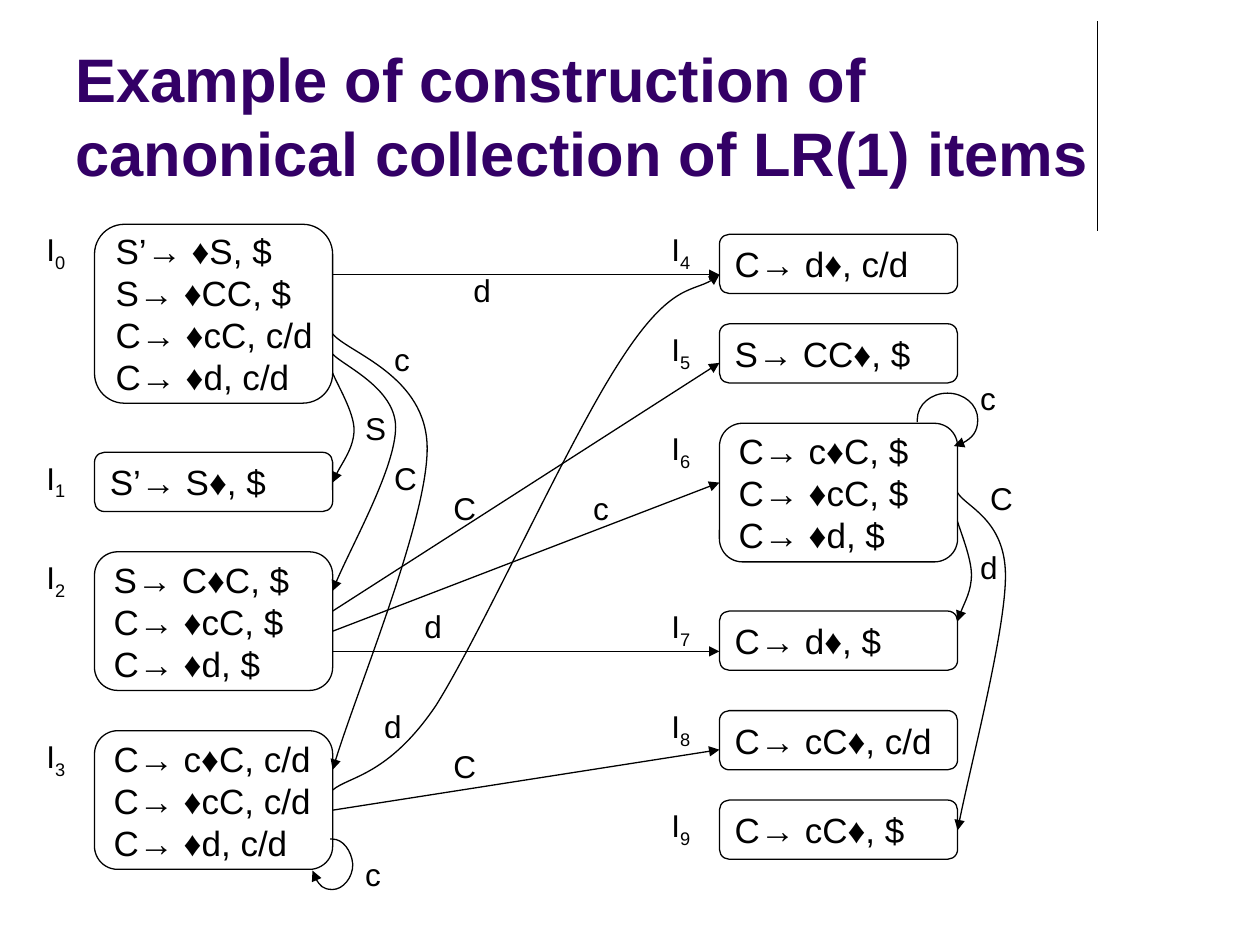
from lxml import etree
from pptx import Presentation
from pptx.dml.color import RGBColor
from pptx.enum import shapes, text
from pptx.oxml.ns import qn
from pptx.util import Inches, Pt

TITLE = "Example of construction of canonical collection of LR(1) items"
INK, PURPLE = "000000", "330066"
LEFT, RIGHT, BOX_WIDTH = 0.75, 5.71, 1.89
LEFT_EDGE = LEFT + BOX_WIDTH
RIGHT_EDGE = RIGHT + BOX_WIDTH

# Item sets: left, top, height, label top, items
STATES = [
    (LEFT, 1.78, 1.42, 1.78, ["S’→ ♦S, $", "S→ ♦CC, $", "C→ ♦cC, c/d", "C→ ♦d, c/d"]),
    (LEFT, 3.59, 0.47, 3.59, ["S’→ S♦, $"]),
    (LEFT, 4.38, 1.1, 4.38, ["S→ C♦C, $", "C→ ♦cC, $", "C→ ♦d, $"]),
    (LEFT, 5.8, 1.1, 5.8, ["C→ c♦C, c/d", "C→ ♦cC, c/d", "C→ ♦d, c/d"]),
    (RIGHT, 1.86, 0.47, 1.78, ["C→ d♦, c/d"]),
    (RIGHT, 2.57, 0.47, 2.57, ["S→ CC♦, $"]),
    (RIGHT, 3.36, 1.1, 3.36, ["C→ c♦C, $", "C→ ♦cC, $", "C→ ♦d, $"]),
    (RIGHT, 4.85, 0.47, 4.77, ["C→ d♦, $"]),
    (RIGHT, 5.64, 0.47, 5.56, ["C→ cC♦, c/d"]),
    (RIGHT, 6.35, 0.47, 6.35, ["C→ cC♦, $"]),
]

# Straight transitions between the columns: start y, end y
STRAIGHT = [(2.18, 2.18), (4.85, 2.88), (5.01, 3.83), (5.17, 5.17), (6.43, 5.95)]

# Curved transitions: a start point, then three Bezier points per segment
CURVES = [
    [(LEFT_EDGE, 2.96), (2.67, 3.04), (2.81, 3.27), (2.81, 3.41),
     (2.81, 3.55), (2.67, 3.74), (LEFT_EDGE, 3.83)],
    [(LEFT_EDGE, 2.81), (2.72, 2.9), (3.14, 3.08), (3.14, 3.39),
     (3.14, 3.71), (2.74, 4.42), (LEFT_EDGE, 4.69)],
    [(LEFT_EDGE, 2.65), (2.76, 2.8), (3.39, 2.98), (3.39, 3.56),
     (3.39, 4.14), (2.79, 5.58), (LEFT_EDGE, 6.11)],
    [(LEFT_EDGE, 6.27), (2.77, 6.16), (3.08, 6.16), (3.46, 5.6),
     (3.83, 5.01), (4.49, 3.54), (4.9, 2.9),
     (5.31, 2.25), (5.54, 2.33), (RIGHT, 2.18)],
    [(RIGHT_EDGE, 4.14), (7.62, 4.21), (7.71, 4.43), (7.71, 4.56),
     (7.71, 4.69), (7.62, 4.85), (RIGHT_EDGE, 4.93)],
    [(RIGHT_EDGE, 3.91), (7.66, 4.02), (7.98, 4.12), (7.98, 4.57),
     (7.98, 5.01), (7.68, 6.16), (RIGHT_EDGE, 6.59)],
    # Self loops
    [(7.28, 3.35), (7.28, 3.34), (7.28, 3.34), (7.28, 3.33),
     (7.28, 3.21), (7.39, 3.12), (7.52, 3.12),
     (7.65, 3.12), (7.76, 3.21), (7.76, 3.33),
     (7.76, 3.43), (7.68, 3.52), (7.57, 3.54)],
    [(2.62, 6.66), (2.63, 6.66), (2.63, 6.66), (2.64, 6.66),
     (2.72, 6.66), (2.79, 6.75), (2.8, 6.86),
     (2.8, 6.97), (2.72, 7.06), (2.64, 7.06),
     (2.56, 7.06), (2.5, 6.99), (2.48, 6.91)],
]

# Transition symbols: symbol, left, top
SYMBOLS = [
    ("S", 2.8, 3.2), ("C", 3.03, 3.59), ("c", 3.03, 2.65), ("d", 3.66, 2.1),
    ("C", 3.5, 3.83), ("c", 4.61, 3.83), ("d", 3.27, 4.77), ("d", 2.95, 5.56),
    ("C", 3.5, 5.88), ("c", 2.8, 6.74), ("c", 7.68, 2.96), ("d", 7.68, 4.3),
    ("C", 7.76, 3.75),
]


def set_font(font, size, color=INK, bold=False):
    font.name, font.size, font.bold = "Arial", Pt(size), bold
    font.color.rgb = RGBColor.from_string(color)


def set_line(shape, arrow=False):
    shape.line.color.rgb = RGBColor.from_string(INK)
    shape.line.width = Pt(0.75)
    if arrow:
        outline = shape.element.spPr.find(qn("a:ln"))
        etree.SubElement(outline, qn("a:tailEnd"), type="triangle")


def add_line(page, start, end, arrow=False):
    line = page.shapes.add_connector(
        shapes.MSO_CONNECTOR.STRAIGHT, *map(Inches, (*start, *end)))
    set_line(line, arrow)
    etree.SubElement(line.element.spPr, qn("a:effectLst"))


def add_curve(page, points):
    start, *rest = [(Inches(x), Inches(y)) for x, y in points]
    builder = page.shapes.build_freeform(*start)
    builder.add_line_segments(rest, close=False)
    curve = builder.convert_to_shape()
    curve.shadow.inherit = False
    curve.fill.background()
    set_line(curve, arrow=True)
    # Turn each three straight segments into one Bezier segment
    outline = next(curve.element.iter(qn("a:path")))
    segments = outline.findall(qn("a:lnTo"))
    for first in range(0, len(segments), 3):
        bezier = etree.SubElement(outline, qn("a:cubicBezTo"))
        for segment in segments[first:first + 3]:
            bezier.append(segment[0])
            outline.remove(segment)


def add_label(page, left, top, label, subscript=""):
    box = page.shapes.add_textbox(*map(Inches, (left, top, 0.36, 0.4)))
    box.text_frame.word_wrap = False
    para = box.text_frame.paragraphs[0]
    set_font(para.font, 18)
    para.add_run().text = label
    if subscript:
        span = para.add_run()
        span.text = subscript
        span.font._element.set("baseline", "-25000")


def add_state(page, left, top, height, items):
    box = page.shapes.add_shape(
        shapes.MSO_SHAPE.ROUNDED_RECTANGLE,
        *map(Inches, (left, top, BOX_WIDTH, height)))
    box.shadow.inherit = False
    box.fill.background()
    set_line(box)
    frame = box.text_frame
    frame.word_wrap = True
    frame.margin_right = 0
    frame.vertical_anchor = text.MSO_ANCHOR.MIDDLE
    frame.text = "\n".join(items)
    for para in frame.paragraphs:
        para.alignment = text.PP_ALIGN.LEFT
        set_font(para.font, 20)


def main():
    deck = Presentation()
    deck.slide_width, deck.slide_height = Inches(10), Inches(7.5)
    page = deck.slides.add_slide(deck.slide_layouts[5])

    # Title and the rule beside it
    title = page.shapes.title
    title.left, title.top, title.width, title.height = map(
        Inches, (0.5, 0.13, 8.25, 1.42))
    frame = title.text_frame
    frame.text = TITLE
    frame.word_wrap = True
    frame.auto_size = text.MSO_AUTO_SIZE.NONE
    frame.vertical_anchor = text.MSO_ANCHOR.BOTTOM
    frame.paragraphs[0].alignment = text.PP_ALIGN.LEFT
    set_font(frame.paragraphs[0].font, 35.1, PURPLE, bold=True)
    add_line(page, (8.71, 0.17), (8.71, 1.83))

    # Transitions
    for start, end in STRAIGHT:
        add_line(page, (LEFT_EDGE, start), (RIGHT, end), arrow=True)
    for points in CURVES:
        add_curve(page, points)
    for symbol, left, top in SYMBOLS:
        add_label(page, left, top, symbol)

    # Item sets
    for number, (left, top, height, label_top, items) in enumerate(STATES):
        add_label(page, left - 0.48, label_top, "I", str(number))
        add_state(page, left, top, height, items)

    deck.save("out.pptx")


if __name__ == "__main__":
    main()
